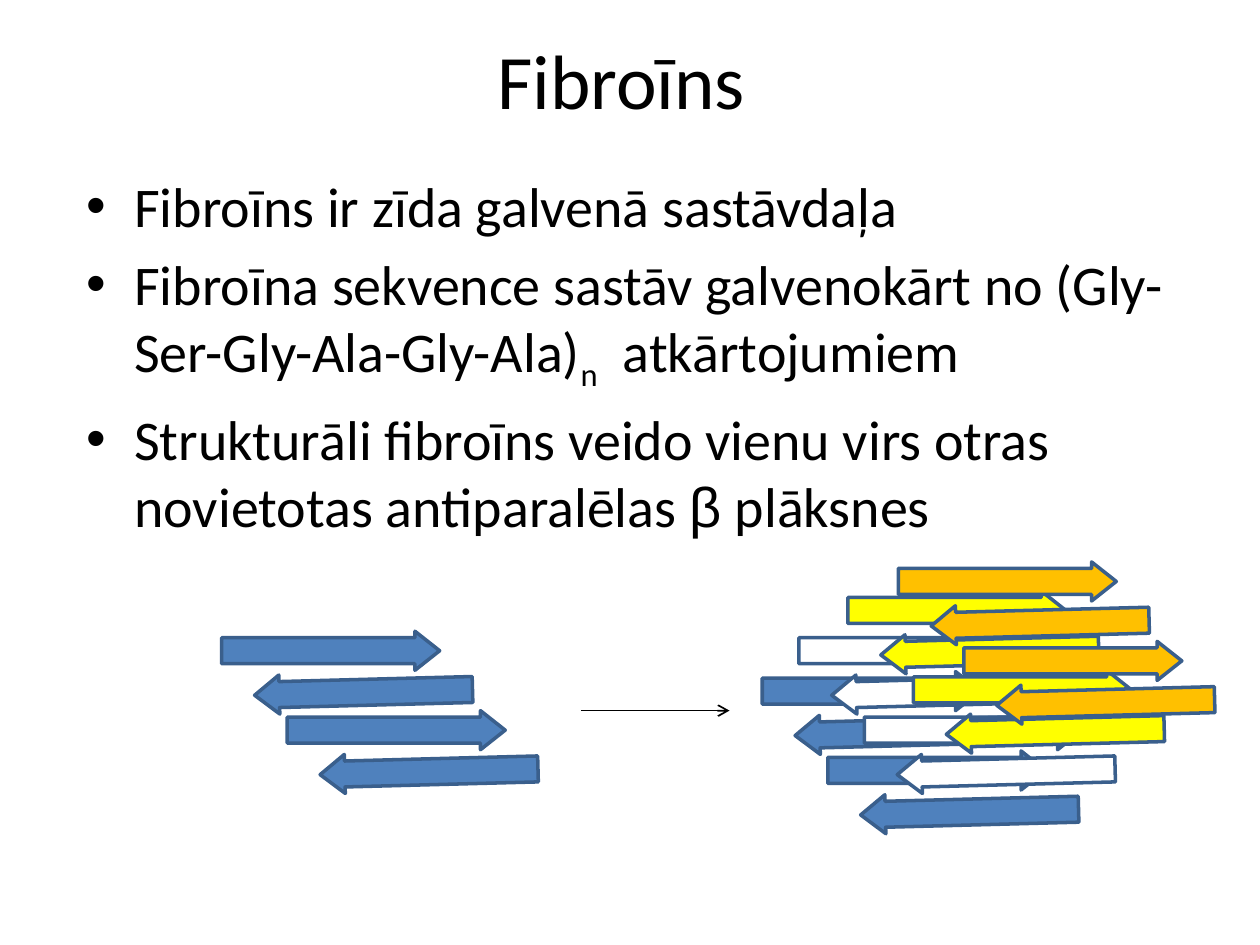
import pptx
import pptx.util
import pptx.dml.color
import pptx.enum.shapes
import pptx.enum.text
import pptx.oxml
import pptx.oxml.ns
from dataclasses import dataclass

Inches = pptx.util.Inches


@dataclass(frozen=True)
class Theme:
    font: str = "Calibri"
    symbol_font: str = "Arial"
    title_size: int = 44
    body_size: int = 32
    text: str = "000000"
    outline: str = "3A5F8C"
    blue: str = "4F81BD"
    white: str = "FFFFFF"
    yellow: str = "FFFF00"
    orange: str = "FFC000"


THEME = Theme()
STRAND_SIZE = (1.73, 0.31)
STRAND_OFFSETS = ((0, 0), (0.26, 0.33), (0.52, 0.63), (0.78, 0.96))
ANTIPARALLEL_ROTATION = 178.5
SHEETS = (
    (1.76, 5.01, THEME.blue),
    (6.05, 5.33, THEME.blue),
    (6.34, 5.01, THEME.white),
    (6.73, 4.69, THEME.yellow),
    (7.13, 4.46, THEME.orange),
)
BULLETS = (
    (("Fibroīns ir zīda galvenā sastāvdaļa", {}),),
    (
        ("Fibroīna sekvence sastāv galvenokārt no (Gly-Ser-Gly-Ala-Gly-Ala)", {}),
        ("n", {"baseline": -25000}),
        ("  atkārtojumiem", {}),
    ),
    (
        ("Strukturāli fibroīns veido vienu virs otras novietotas antiparalēlas ", {}),
        ("β", {"name": THEME.symbol_font}),
        (" plāksnes", {}),
    ),
)


def color(value):
    return pptx.dml.color.RGBColor.from_string(value)


def place(shape, left, top, width, height):
    box = {"left": left, "top": top, "width": width, "height": height}
    for attribute, value in box.items():
        setattr(shape, attribute, Inches(value))


def add_run(paragraph, text, size, name=THEME.font, baseline=None):
    run = paragraph.add_run()
    run.text = text
    for attribute, value in {"name": name, "size": pptx.util.Pt(size)}.items():
        setattr(run.font, attribute, value)
    run.font.color.rgb = color(THEME.text)
    if baseline is not None:
        run.font._element.set("baseline", str(baseline))


def fill_title(slide):
    title = slide.shapes.title
    place(title, 0.43, 0, 9, 1.25)
    title.text_frame.vertical_anchor = pptx.enum.text.MSO_ANCHOR.MIDDLE
    paragraph = title.text_frame.paragraphs[0]
    paragraph.alignment = pptx.enum.text.PP_ALIGN.CENTER
    add_run(paragraph, "Fibroīns", THEME.title_size)


def fill_body(slide):
    body = slide.placeholders[1]
    place(body, 0.59, 1.31, 9, 3.34)
    frame = body.text_frame
    for index, parts in enumerate(BULLETS):
        paragraph = frame.add_paragraph() if index else frame.paragraphs[0]
        for text, formats in parts:
            add_run(paragraph, text, THEME.body_size, **formats)


def add_strand(slide, left, top, fill, rotation):
    strand = slide.shapes.add_shape(
        pptx.enum.shapes.MSO_SHAPE.RIGHT_ARROW,
        *(Inches(length) for length in (left, top, *STRAND_SIZE)),
    )
    strand.adjustments[0] = 0.665
    strand.adjustments[1] = 0.632
    strand.rotation = rotation
    strand.shadow.inherit = False
    strand.fill.solid()
    strand.fill.fore_color.rgb = color(fill)
    strand.line.color.rgb = color(THEME.outline)
    strand.line.width = pptx.util.Pt(2)


def add_sheet(slide, left, top, fill):
    for index, (across, down) in enumerate(STRAND_OFFSETS):
        rotation = ANTIPARALLEL_ROTATION if index % 2 else 0
        add_strand(slide, left + across, top + down, fill, rotation)


def add_stacking_arrow(slide):
    connector = slide.shapes.add_connector(
        pptx.enum.shapes.MSO_CONNECTOR.STRAIGHT,
        *(Inches(length) for length in (4.61, 5.64, 5.79, 5.64)),
    )
    connector.line.color.rgb = color(THEME.text)
    connector.line.width = pptx.util.Pt(1)
    qualified = pptx.oxml.ns.qn
    properties = connector._element.spPr
    line = properties.find(qualified("a:ln"))
    line.append(line.makeelement(qualified("a:tailEnd"), {"type": "arrow"}))
    properties.append(properties.makeelement(qualified("a:effectLst"), {}))


def main():
    presentation = pptx.Presentation()
    presentation.slide_width = Inches(10)
    presentation.slide_height = Inches(7.5)
    slide = presentation.slides.add_slide(presentation.slide_layouts[1])
    fill_title(slide)
    fill_body(slide)
    for left, top, fill in SHEETS:
        add_sheet(slide, left, top, fill)
    add_stacking_arrow(slide)
    presentation.save("out.pptx")


if __name__ == "__main__":
    main()
